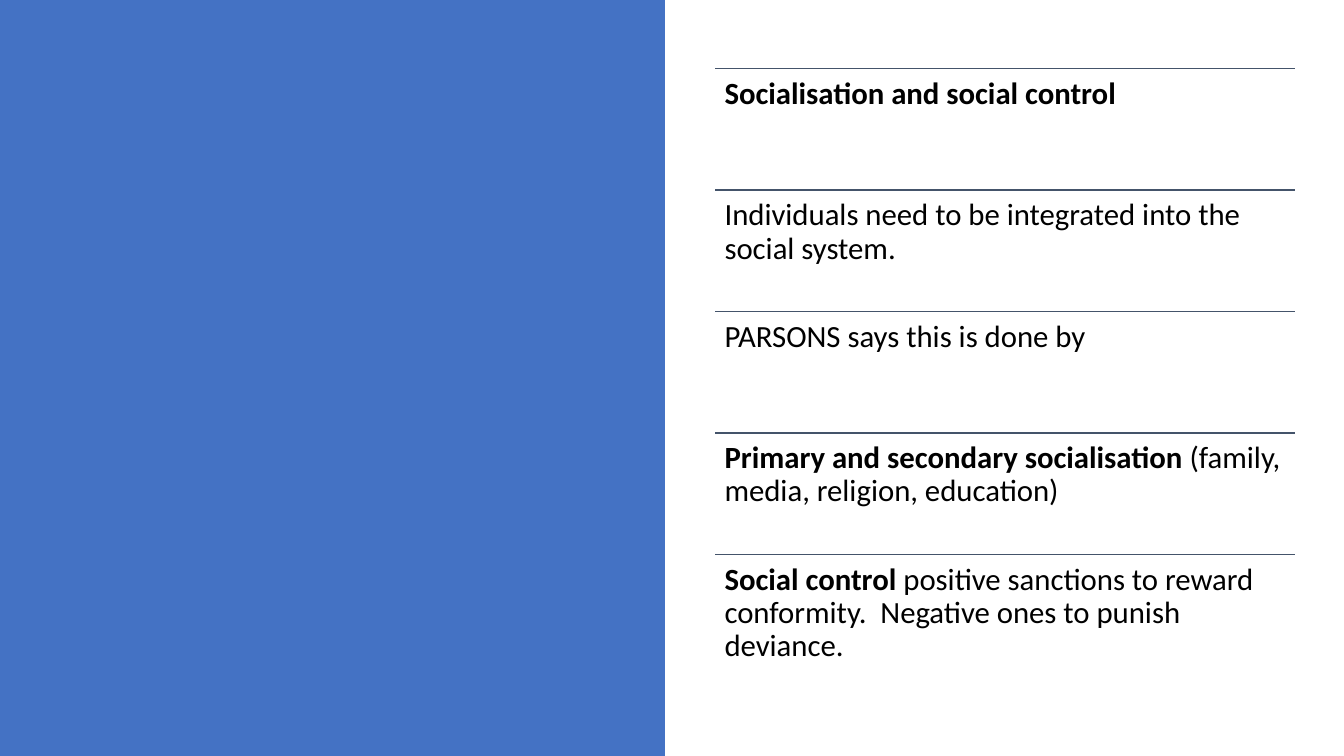
"""Build the slide on socialisation and social control."""
import pptx
import pptx.dml.color
import pptx.enum.shapes
import pptx.enum.text
import pptx.oxml
import pptx.util

Cm, Pt = pptx.util.Cm, pptx.util.Pt

ROWS = [
    [("Socialisation and social control", True)],
    [("Individuals need to be integrated into the social system.", False)],
    [("PARSONS says this is done by", False)],
    [("Primary and secondary socialisation", True),
     (" (family, media, religion, education)", False)],
    [("Social control", True),
     (" positive sanctions to reward conformity.  Negative ones to punish deviance.", False)],
]
COLORS = {"panel": "4472C4", "rule": "44546A", "text": "000000"}
FONT, SIZE = "Calibri", 22
SLIDE_W, SLIDE_H, PANEL_W = 33.87, 19.05, 16.76
LEFT, TOP, WIDTH, PITCH, INSET = 18.03, 1.73, 14.6, 3.06, 0.23


def color(name):
    return pptx.dml.color.RGBColor.from_string(COLORS[name])


def add_panel(slide):
    sp = slide.shapes.add_shape(pptx.enum.shapes.MSO_SHAPE.RECTANGLE,
                                0, 0, Cm(PANEL_W), Cm(SLIDE_H))
    sp.shadow.inherit = False
    sp.fill.solid()
    sp.fill.fore_color.rgb = color("panel")
    sp.line.fill.background()


def add_rule(slide, y):
    line = slide.shapes.add_connector(pptx.enum.shapes.MSO_CONNECTOR.STRAIGHT,
                                      Cm(LEFT), Cm(y), Cm(LEFT + WIDTH), Cm(y))
    line.line.color.rgb = color("rule")
    line.line.width = Pt(1)
    line._element.spPr.append(pptx.oxml.parse_xml(
        '<a:effectLst xmlns:a="http://schemas.openxmlformats.org/drawingml/2006/main"/>'))


def add_text(slide, y, runs):
    tf = slide.shapes.add_textbox(Cm(LEFT), Cm(y), Cm(WIDTH), Cm(PITCH)).text_frame
    tf.word_wrap = True
    tf.vertical_anchor = pptx.enum.text.MSO_ANCHOR.TOP
    tf.margin_left = tf.margin_right = tf.margin_top = tf.margin_bottom = Cm(INSET)
    p = tf.paragraphs[0]
    p.line_spacing = 0.9
    for text, bold in runs:
        r = p.add_run()
        r.text = text
        r.font.name, r.font.size, r.font.bold = FONT, Pt(SIZE), bold
        r.font.color.rgb = color("text")


def main():
    prs = pptx.Presentation()
    prs.slide_width, prs.slide_height = Cm(SLIDE_W), Cm(SLIDE_H)
    slide = prs.slides.add_slide(prs.slide_layouts.get_by_name("Blank"))
    add_panel(slide)
    for i, runs in enumerate(ROWS):
        y = TOP + i * PITCH
        add_rule(slide, y)
        add_text(slide, y, runs)
    prs.save("out.pptx")


if __name__ == "__main__":
    main()
